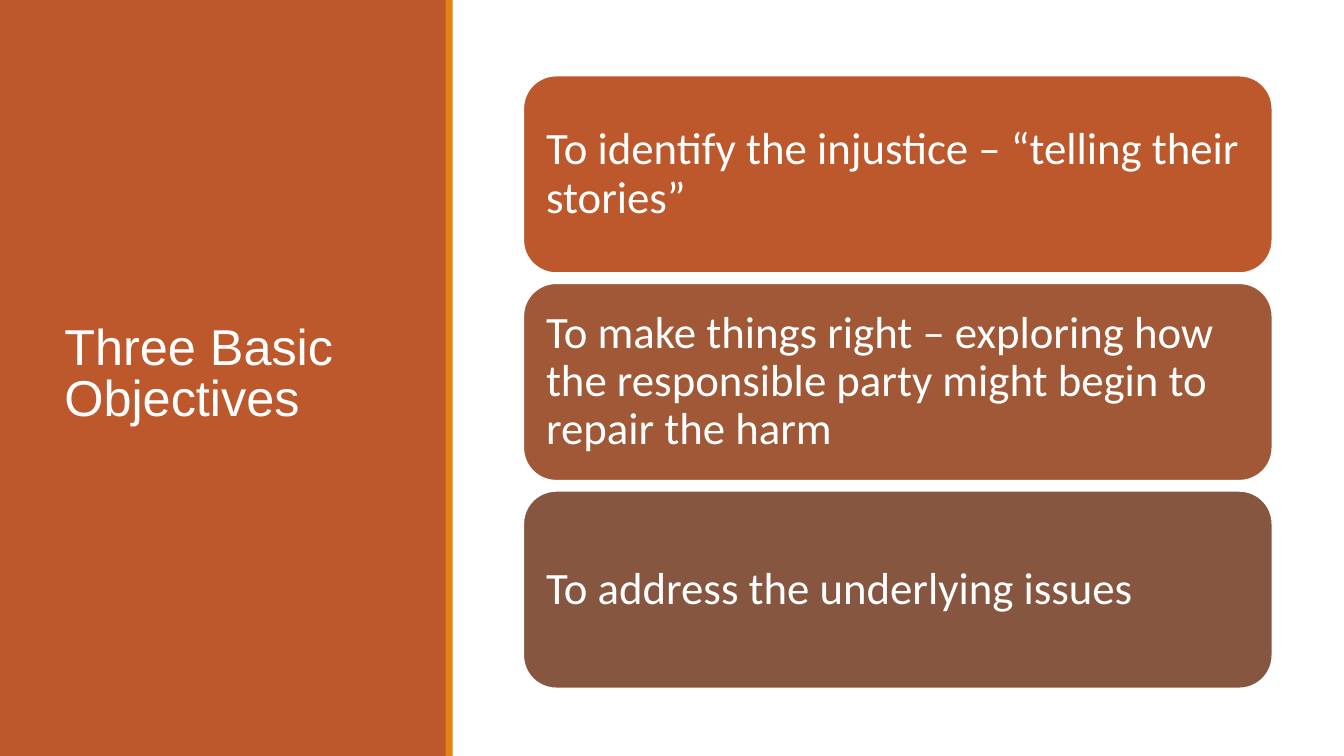
from dataclasses import dataclass

from pptx import Presentation
from pptx.dml.color import RGBColor as Rgb
from pptx.enum.shapes import MSO_SHAPE as Shape
from pptx.enum.text import MSO_ANCHOR as Anchor, PP_ALIGN as Align
from pptx.util import Inches, Pt


@dataclass(frozen=True)
class Theme:
    rust: str = "BD582C"
    clay: str = "A05837"
    brown: str = "865640"
    gold: str = "E48312"
    white: str = "FFFFFF"
    head: int = 36
    body: int = 32
    sans: str = "Arial"
    text: str = "Calibri"


class Deck:
    """Draws panels, cards and titles on one slide in a shared style."""

    def __init__(self, prs, theme):
        self.theme = theme
        self.slide = prs.slides.add_slide(prs.slide_layouts[6])

    def fill(self, kind, box, color):
        shape = self.slide.shapes.add_shape(kind, *map(Inches, box))
        shape.shadow.inherit = False
        shape.fill.solid()
        shape.fill.fore_color.rgb = Rgb.from_string(color)
        return shape

    def panel(self, box, color):
        self.fill(Shape.RECTANGLE, box, color).line.fill.background()

    def label(self, shape, words, size, face, pad, lead):
        frame = shape.text_frame
        sides = ("left", "top", "right", "bottom")
        style = {f"margin_{side}": Inches(pad) for side in sides}
        style |= {"word_wrap": True, "vertical_anchor": Anchor.MIDDLE}
        para = frame.paragraphs[0]
        run = para.add_run()
        run.text = words
        for part, values in (
            (frame, style),
            (para, {"alignment": Align.LEFT, "line_spacing": lead}),
            (run.font, {"size": Pt(size), "name": face}),
        ):
            for key, value in values.items():
                setattr(part, key, value)
        run.font.color.rgb = Rgb.from_string(self.theme.white)

    def title(self, box, words):
        shape = self.slide.shapes.add_textbox(*map(Inches, box))
        self.label(shape, words, self.theme.head, self.theme.sans, 0.1, 0.85)

    def card(self, box, color, words):
        shape = self.fill(Shape.ROUNDED_RECTANGLE, box, color)
        shape.line.color.rgb = Rgb.from_string(self.theme.white)
        shape.line.width = Pt(1.25)
        self.label(shape, words, self.theme.body, self.theme.text, 0.13, 0.9)


def main():
    prs = Presentation()
    prs.slide_width, prs.slide_height = Inches(13.33), Inches(7.5)
    theme = Theme()
    deck = Deck(prs, theme)
    deck.panel((0, 0, 4.43, 7.5), theme.rust)
    deck.title((0.54, 0.57, 3.37, 6.31), "Three Basic Objectives")
    deck.panel((4.42, 0, 0.07, 7.5), theme.gold)
    goals = (
        (theme.rust, "To identify the injustice – “telling their stories”"),
        (theme.clay, "To make things right – exploring how the responsible "
                     "party might begin to repair the harm"),
        (theme.brown, "To address the underlying issues"),
    )
    for row, (color, words) in enumerate(goals):
        deck.card((5.19, 0.75 + 2.06 * row, 7.43, 1.96), color, words)
    prs.save("out.pptx")


if __name__ == "__main__":
    main()
